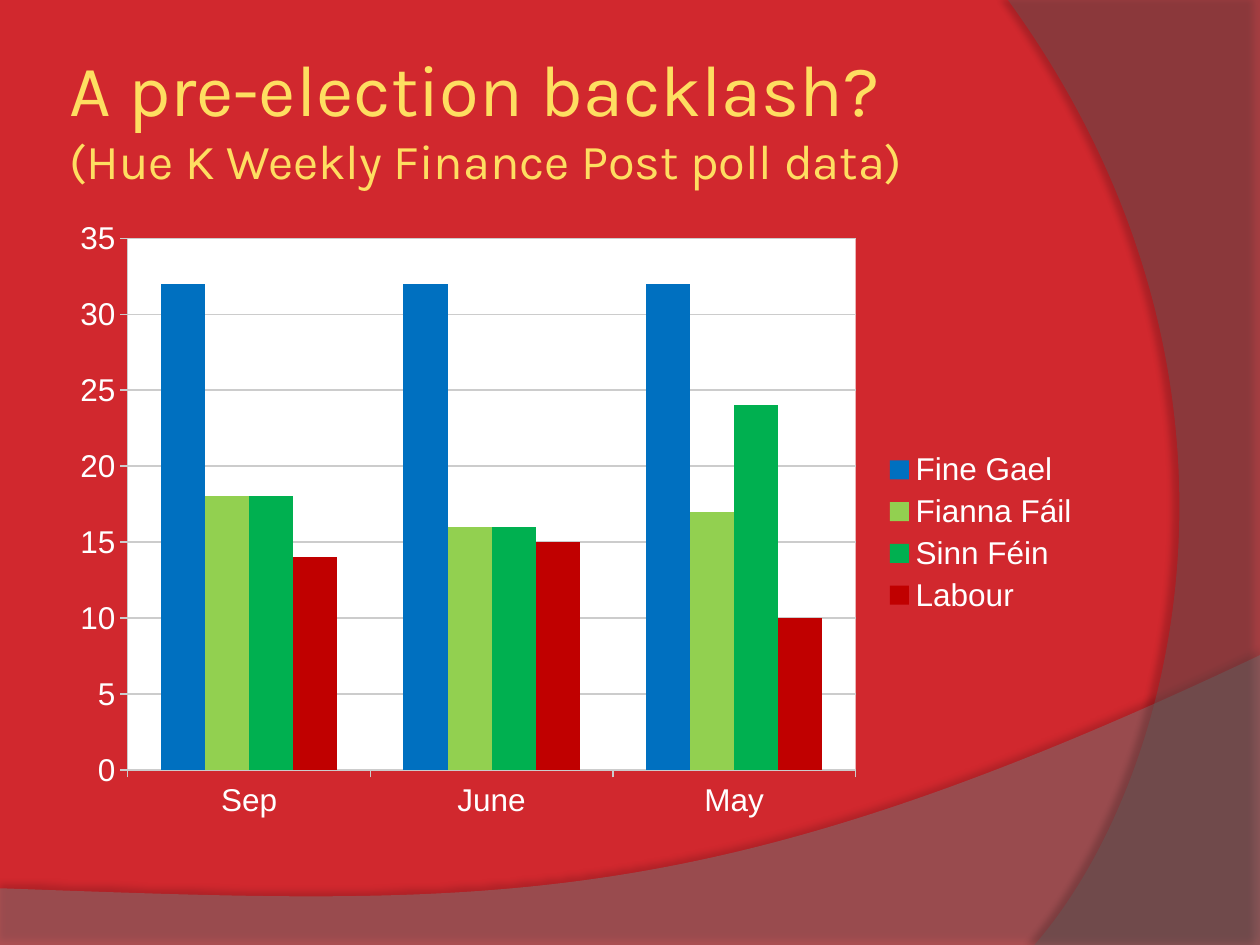
from lxml.etree import SubElement
from pptx import Presentation
from pptx.chart.data import CategoryChartData
from pptx.dml.color import RGBColor
from pptx.enum.chart import XL_CHART_TYPE, XL_LEGEND_POSITION, XL_TICK_MARK
from pptx.enum.text import MSO_ANCHOR, MSO_AUTO_SIZE, PP_ALIGN
from pptx.oxml import parse_xml
from pptx.oxml.ns import nsdecls, qn
from pptx.util import Inches, Pt

COLORS = {
    "background": "D1282E", "wave": "7F7F7F", "side": "5E5E5E", "shadow": "000000",
    "title": "FEDE61", "text": "FFFFFF", "plot": "FFFFFF", "grid": "CCCCCC",
}
PARTIES = [
    ("Fine Gael", (32, 32, 32), "0070C0"),
    ("Fianna Fáil", (18, 16, 17), "92D050"),
    ("Sinn Féin", (18, 16, 24), "00B050"),
    ("Labour", (14, 15, 10), "C00000"),
]
WIDTH, HEIGHT = 10, 7.5
LEFT, CONTENT_WIDTH = WIDTH * 0.05, 8.17


def color(name):
    return RGBColor.from_string(COLORS[name])


def bend_last_edge(shape, controls):
    """Turn the last straight edge into a Bezier curve with two control points."""
    edge = list(shape._element.spPr.iter(qn("a:lnTo")))[-1]
    edge.tag = qn("a:cubicBezTo")
    for index, (x, y) in enumerate(controls):
        point = parse_xml(
            f'<a:pt {nsdecls("a")} x="{Inches(x) - shape.left}" y="{Inches(y) - shape.top}"/>')
        edge.insert(index, point)


deck = Presentation()
deck.slide_width, deck.slide_height = Inches(WIDTH), Inches(HEIGHT)
page = deck.slides.add_slide(deck.slide_layouts[5])
page.background.fill.solid()
page.background.fill.fore_color.rgb = color("background")

# Translucent swooshes: corners, curve controls, colour, opacity,
# then shadow opacity, distance and direction
wave = [(0, HEIGHT), (WIDTH, HEIGHT), (WIDTH, 5.2), (0, 7.05)]
side = [(WIDTH, 0), (WIDTH, HEIGHT), (8.21, HEIGHT), (8, 0)]
swooshes = [
    (wave, [(5.59, 7.29), (3.91, 7.19)], "wave", 45, 35, 3.5, 270),
    (side, [(9.35, 6.19), (10.18, 3)], "side", 40, 45, 4, 180),
]
for corners, controls, name, opacity, shade, distance, direction in swooshes:
    points = [(Inches(x), Inches(y)) for x, y in corners]
    builder = page.shapes.build_freeform(*points[0])
    builder.add_line_segments(points[1:], close=True)
    swoosh = builder.convert_to_shape()
    bend_last_edge(swoosh, controls)
    swoosh.fill.solid()
    swoosh.fill.fore_color.rgb = color(name)
    swoosh.line.fill.background()
    swoosh.shadow.inherit = False
    properties = swoosh._element.spPr
    fill_color = properties.find(qn("a:solidFill")).find(qn("a:srgbClr"))
    SubElement(fill_color, qn("a:alpha"), val=str(opacity * 1000))
    shadow = SubElement(
        properties.find(qn("a:effectLst")), qn("a:outerShdw"),
        blurRad=str(Pt(4)), dist=str(Pt(distance)), dir=str(direction * 60000),
        algn="ctr", rotWithShape="0")
    shadow_color = SubElement(shadow, qn("a:srgbClr"), val=COLORS["shadow"])
    SubElement(shadow_color, qn("a:alpha"), val=str(shade * 1000))

# Title, brought in front of the swooshes
title = page.shapes.title
page.shapes._spTree.append(title._element)
title.left, title.top = Inches(LEFT), Inches(HEIGHT * 0.04)
title.width, title.height = Inches(CONTENT_WIDTH), Inches(1.25)
frame = title.text_frame
frame.text = "A pre-election backlash? \v(Hue K Weekly Finance Post poll data)"
frame.word_wrap = True
frame.auto_size = MSO_AUTO_SIZE.NONE
frame.vertical_anchor = MSO_ANCHOR.MIDDLE
frame.margin_left = frame.margin_right = Inches(0.05)
frame.margin_top = frame.margin_bottom = Inches(0.05)
paragraph = frame.paragraphs[0]
paragraph.alignment = PP_ALIGN.LEFT
for span, size in zip(paragraph.runs, (41.4, 27.9)):
    span.font.name = "Karla"
    span.font.size = Pt(size)
    span.font.color.rgb = color("title")

# Poll chart
data = CategoryChartData()
data.categories = ["Sep", "June", "May"]
for party, shares, _ in PARTIES:
    data.add_series(party, shares)
chart = page.shapes.add_chart(
    XL_CHART_TYPE.COLUMN_CLUSTERED, Inches(LEFT), Inches(1.75),
    Inches(CONTENT_WIDTH), Inches(HEIGHT * 0.66), data).chart
chart.has_title = False
chart.font.name = "Arial"
chart.font.size = Pt(18)
chart.font.color.rgb = color("text")
chart.has_legend = True
chart.legend.position = XL_LEGEND_POSITION.RIGHT
chart.legend.include_in_layout = False

columns = chart.plots[0]
columns.gap_width = 150
columns.overlap = 0
columns.vary_by_categories = False
for series, (_, _, party_color) in zip(columns.series, PARTIES):
    series.format.fill.solid()
    series.format.fill.fore_color.rgb = RGBColor.from_string(party_color)

chart.value_axis.minimum_scale = 0
chart.value_axis.maximum_scale = 35
chart.value_axis.major_unit = 5
chart.value_axis.has_major_gridlines = True
for axis in (chart.category_axis, chart.value_axis):
    axis.major_tick_mark = XL_TICK_MARK.OUTSIDE
    axis.minor_tick_mark = XL_TICK_MARK.NONE
for ruled in (chart.category_axis, chart.value_axis, chart.value_axis.major_gridlines):
    ruled.format.line.color.rgb = color("grid")
    ruled.format.line.width = Pt(0.75)

# Inner plot area: position as shares of the chart, and a white fill
plot_area = chart._chartSpace.chart.plotArea
for old_layout in plot_area.findall(qn("c:layout")):
    plot_area.remove(old_layout)
layout = parse_xml(f"<c:layout {nsdecls('c')}><c:manualLayout/></c:layout>")
settings = [("layoutTarget", "inner"), ("xMode", "edge"), ("yMode", "edge"),
            ("x", 0.063), ("y", 0.028), ("w", 0.707), ("h", 0.853)]
for tag, value in settings:
    SubElement(layout[0], qn(f"c:{tag}"), val=str(value))
plot_area.insert(0, layout)
plot_area.append(parse_xml(
    f"<c:spPr {nsdecls('c', 'a')}><a:solidFill>"
    f"<a:srgbClr val=\"{COLORS['plot']}\"/></a:solidFill></c:spPr>"))

deck.save("out.pptx")
